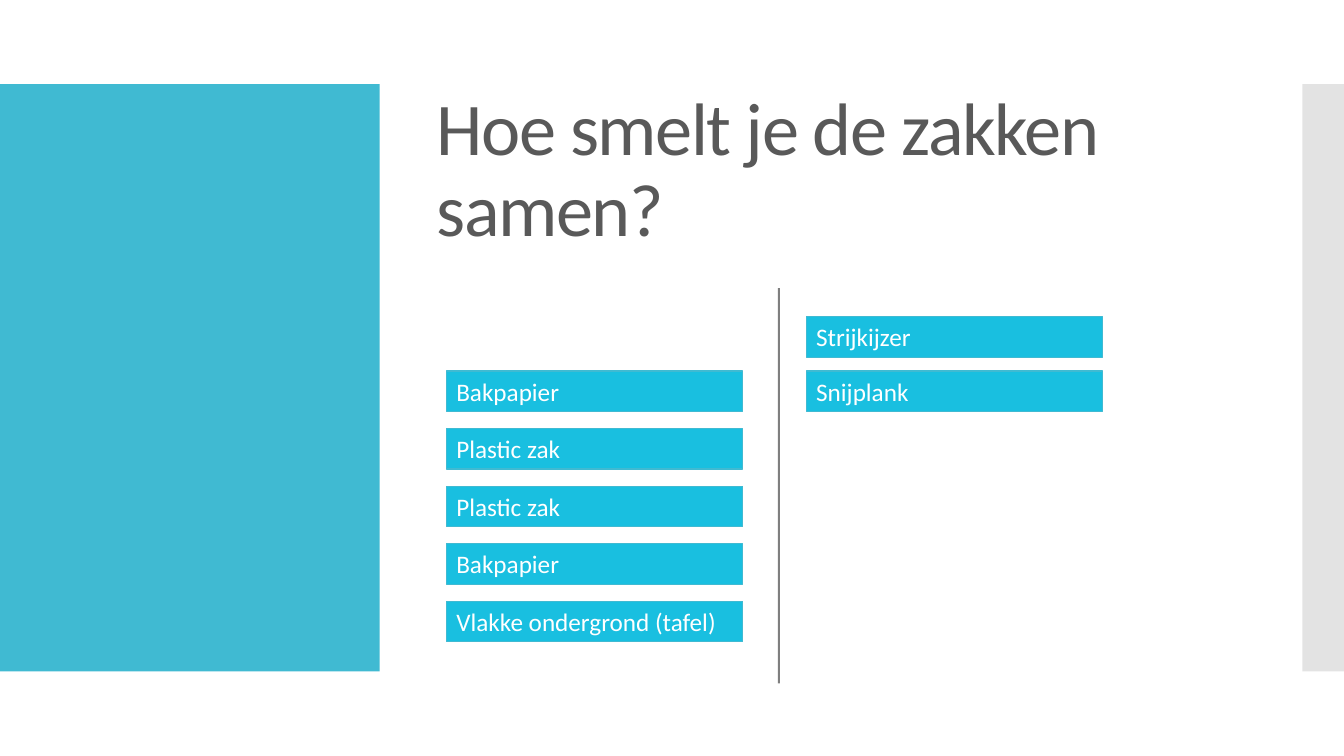
import lxml.etree
import pptx
import pptx.dml.color
import pptx.enum.shapes
import pptx.enum.text
import pptx.oxml.ns
import pptx.util
from pptx.util import Cm

RGBColor = pptx.dml.color.RGBColor
TEAL = RGBColor(0x40, 0xBA, 0xD2)
CYAN = RGBColor(0x19, 0xBF, 0xE0)
GRAY = RGBColor(0xC8, 0xC8, 0xC8)
DARK_GRAY = RGBColor(0x59, 0x59, 0x59)
BLACK = RGBColor(0x00, 0x00, 0x00)
WHITE = RGBColor(0xFF, 0xFF, 0xFF)
qn = pptx.oxml.ns.qn


def write_text(shape, text, size, color, anchor, line_spacing=1.0, character_spacing=0):
    """Fill the shape with left-aligned Calibri; character_spacing is in points."""
    frame = shape.text_frame
    frame.word_wrap = True
    frame.auto_size = pptx.enum.text.MSO_AUTO_SIZE.NONE
    frame.vertical_anchor = anchor
    paragraph = frame.paragraphs[0]
    paragraph.alignment = pptx.enum.text.PP_ALIGN.LEFT
    paragraph.line_spacing = line_spacing
    run = paragraph.add_run()
    run.text = text
    run.font.name = "Calibri"
    run.font.size = pptx.util.Pt(size)
    run.font.color.rgb = color
    if character_spacing:
        run.font._element.set("spc", str(character_spacing * 100))


def add_rectangle(left, top, width, height, fill, line=None):
    shape = slide.shapes.add_shape(
        pptx.enum.shapes.MSO_SHAPE.RECTANGLE, Cm(left), Cm(top), Cm(width), Cm(height))
    shape.shadow.inherit = False
    shape.fill.solid()
    shape.fill.fore_color.rgb = fill
    if line is None:
        shape.line.fill.background()
    else:
        shape.line.color.rgb = line
        shape.line.width = pptx.util.Pt(0.75)
    return shape


presentation = pptx.Presentation()
presentation.slide_width = Cm(33.87)
presentation.slide_height = Cm(19.05)
slide = presentation.slides.add_slide(presentation.slide_layouts[5])

# Side bands
add_rectangle(0, 2.12, 9.57, 14.8, TEAL)
right_band = add_rectangle(32.82, 2.12, 1.05, 14.8, GRAY)

# Title
title = slide.shapes.title
title.left, title.top, title.width, title.height = Cm(10.75), Cm(1.83), Cm(20.32), Cm(4.65)
write_text(title, "Hoe smelt je de zakken samen?", size=53.1, color=DARK_GRAY,
           anchor=pptx.enum.text.MSO_ANCHOR.BOTTOM, line_spacing=0.9, character_spacing=-1)

# Materials: left edge, first top, step, labels
columns = [
    (11.25, 9.35, 1.45, ["Bakpapier", "Plastic zak", "Plastic zak", "Bakpapier",
                         "Vlakke ondergrond (tafel)"]),
    (20.32, 7.98, 1.37, ["Strijkijzer", "Snijplank"]),
]
for left, first_top, step, labels in columns:
    for index, label in enumerate(labels):
        box = add_rectangle(left, first_top + index * step, 7.47, 1.02, CYAN, line=TEAL)
        write_text(box, label, size=18, color=WHITE,
                   anchor=pptx.enum.text.MSO_ANCHOR.MIDDLE)

# Divider between the columns
divider = slide.shapes.add_connector(
    pptx.enum.shapes.MSO_CONNECTOR.STRAIGHT, Cm(19.63), Cm(7.26), Cm(19.63), Cm(17.22))
divider.line.color.rgb = BLACK
divider.line.width = pptx.util.Pt(1.35)
lxml.etree.SubElement(divider._element.spPr, qn("a:effectLst"))

# Half transparency
for shape in (right_band, divider):
    color = shape._element.spPr.find(".//" + qn("a:srgbClr"))
    lxml.etree.SubElement(color, qn("a:alpha")).set("val", "50000")

presentation.save("out.pptx")
